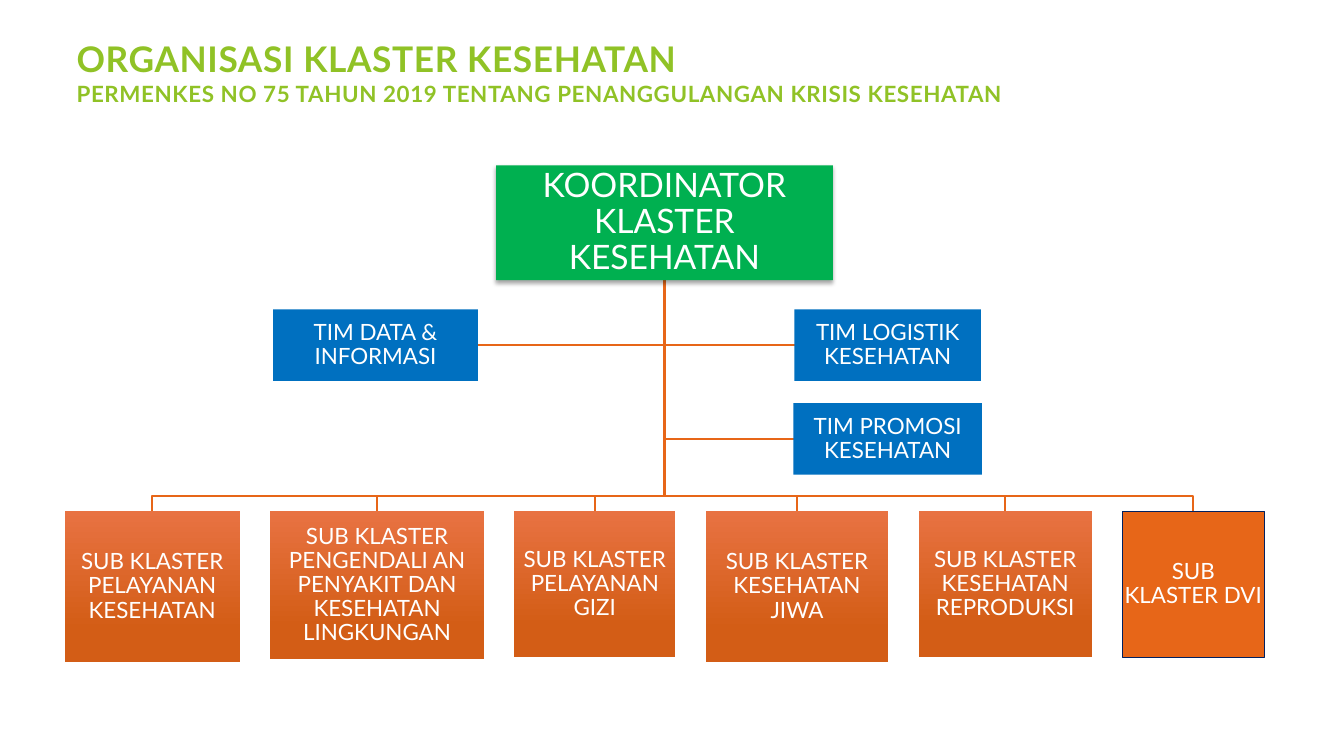
from lxml import etree
from pptx import Presentation
from pptx.dml.color import RGBColor
from pptx.enum.shapes import MSO_SHAPE
from pptx.enum.text import MSO_ANCHOR, PP_ALIGN
from pptx.oxml.ns import qn
from pptx.util import Inches, Pt

RECTANGLE = MSO_SHAPE.RECTANGLE
MIDDLE = MSO_ANCHOR.MIDDLE
CENTER = PP_ALIGN.CENTER

FONT = "Lato"
WHITE, LIME, GREEN, BLUE = "FFFFFF", "90C226", "00B050", "0070C0"
ORANGE, NAVY = "E76618", "002060"
ORANGE_GRADIENT = ((0, "E87242"), (0.78, "D35D16"))

# Teams beside the trunk: text, left, top, width
TEAM_HEIGHT = 0.71
TEAMS = [
    ("TIM DATA & INFORMASI", 2.71, 3.07, 2.03),
    ("TIM LOGISTIK KESEHATAN", 7.88, 3.07, 1.85),
    ("TIM PROMOSI KESEHATAN", 7.87, 4, 1.87),
]
# Sub-clusters in the bottom row: text, width, height
SUB_CLUSTERS = [
    ("SUB KLASTER PELAYANAN KESEHATAN", 1.74, 1.5),
    ("SUB KLASTER PENGENDALI AN PENYAKIT DAN KESEHATAN LINGKUNGAN", 2.12, 1.47),
    ("SUB KLASTER PELAYANAN GIZI", 1.6, 1.45),
    ("SUB KLASTER KESEHATAN JIWA", 1.81, 1.5),
    ("SUB KLASTER KESEHATAN REPRODUKSI", 1.72, 1.45),
    ("SUB KLASTER DVI", 1.41, 1.45),
]
SUB_GAP = 0.3
BUS_RISE = 0.15


def color(hex_text):
    return RGBColor.from_string(hex_text)


def add_text(paragraph, text, size=16, hex_color=WHITE, bold=False, spacing=None):
    run = paragraph.add_run()
    run.text = text
    run.font.name = FONT
    run.font.size = Pt(size)
    run.font.bold = bold
    run.font.color.rgb = color(hex_color)
    if spacing is not None:
        run._r.get_or_add_rPr().set("spc", str(int(spacing * 100)))


def add_elbow(slide, *points):
    corners = [(Inches(x), Inches(y)) for x, y in points]
    builder = slide.shapes.build_freeform(*corners[0])
    builder.add_line_segments(corners[1:], close=False)
    elbow = builder.convert_to_shape()
    elbow.shadow.inherit = False
    elbow.fill.background()
    elbow.line.color.rgb = color(ORANGE)
    elbow.line.width = Pt(1.5)


def add_soft_shadow(shape):
    effects = shape._element.spPr.find(qn("a:effectLst"))
    shadow = etree.SubElement(
        effects, qn("a:outerShdw"), blurRad=str(Pt(3)), dist=str(Pt(2)),
        dir="5400000", rotWithShape="0")
    black = etree.SubElement(shadow, qn("a:srgbClr"), val="000000")
    etree.SubElement(black, qn("a:alpha"), val="35000")


def add_box(slide, text, left, top, width, height, fill, size=16, inset=0.01, outline=None):
    shape = slide.shapes.add_shape(
        RECTANGLE, Inches(left), Inches(top), Inches(width), Inches(height))
    shape.shadow.inherit = False
    if isinstance(fill, str):
        shape.fill.solid()
        shape.fill.fore_color.rgb = color(fill)
    else:
        shape.fill.gradient()
        shape.fill.gradient_angle = 270
        for stop, (position, hex_color) in zip(shape.fill.gradient_stops, fill):
            stop.position = position
            stop.color.rgb = color(hex_color)
    if outline:
        shape.line.color.rgb = color(outline)
        shape.line.width = Pt(0.75)
    else:
        shape.line.fill.background()

    frame = shape.text_frame
    frame.word_wrap = True
    frame.vertical_anchor = MIDDLE
    frame.margin_left = frame.margin_right = Inches(inset)
    frame.margin_top = frame.margin_bottom = Inches(inset)
    paragraph = frame.paragraphs[0]
    paragraph.alignment = CENTER
    paragraph.line_spacing = 0.9
    add_text(paragraph, text, size=size)
    return shape


def add_title(slide, left, top, width, height):
    box = slide.shapes.add_textbox(Inches(left), Inches(top), Inches(width), Inches(height))
    frame = box.text_frame
    frame.word_wrap = True
    frame.margin_left = frame.margin_right = Inches(0.09)
    frame.margin_top = frame.margin_bottom = Inches(0.04)
    style = {"hex_color": LIME, "bold": True, "spacing": 0.45}
    add_text(frame.paragraphs[0], "ORGANISASI KLASTER KESEHATAN", size=25.2, **style)
    add_text(frame.add_paragraph(),
             "PERMENKES NO 75 TAHUN 2019 TENTANG PENANGGULANGAN KRISIS KESEHATAN", **style)


def add_coordinator(slide, left, top, width, height):
    shape = add_box(slide, "KOORDINATOR KLASTER KESEHATAN", left, top, width, height,
                    GREEN, size=24, inset=0.02)
    add_soft_shadow(shape)


def add_teams(slide, trunk_x, trunk_y):
    for text, left, top, width in TEAMS:
        edge = left if left > trunk_x else left + width
        middle = top + TEAM_HEIGHT / 2
        add_elbow(slide, (trunk_x, trunk_y), (trunk_x, middle), (edge, middle))
        add_box(slide, text, left, top, width, TEAM_HEIGHT, BLUE)


def add_sub_clusters(slide, trunk_x, trunk_y, left, top):
    bus_y = top - BUS_RISE
    for text, width, height in SUB_CLUSTERS:
        last = text == SUB_CLUSTERS[-1][0]
        center = left + width / 2
        add_elbow(slide, (trunk_x, trunk_y), (trunk_x, bus_y), (center, bus_y), (center, top))
        add_box(slide, text, left, top, width, height,
                ORANGE if last else ORANGE_GRADIENT, outline=NAVY if last else None)
        left += width + SUB_GAP


def add_organisation(slide, left, top, width, height, row_left, row_top):
    trunk_x, trunk_y = left + width / 2, top + height
    add_teams(slide, trunk_x, trunk_y)
    add_sub_clusters(slide, trunk_x, trunk_y, row_left, row_top)
    add_coordinator(slide, left, top, width, height)


def main():
    presentation = Presentation()
    presentation.slide_width = Inches(13.33)
    presentation.slide_height = Inches(7.5)
    slide = presentation.slides.add_slide(presentation.slide_layouts[6])
    add_organisation(slide, 4.92, 1.64, 3.34, 1.14, row_left=0.64, row_top=5.07)
    add_title(slide, 0.67, 0.33, 10.37, 0.78)
    presentation.save("out.pptx")


if __name__ == "__main__":
    main()
